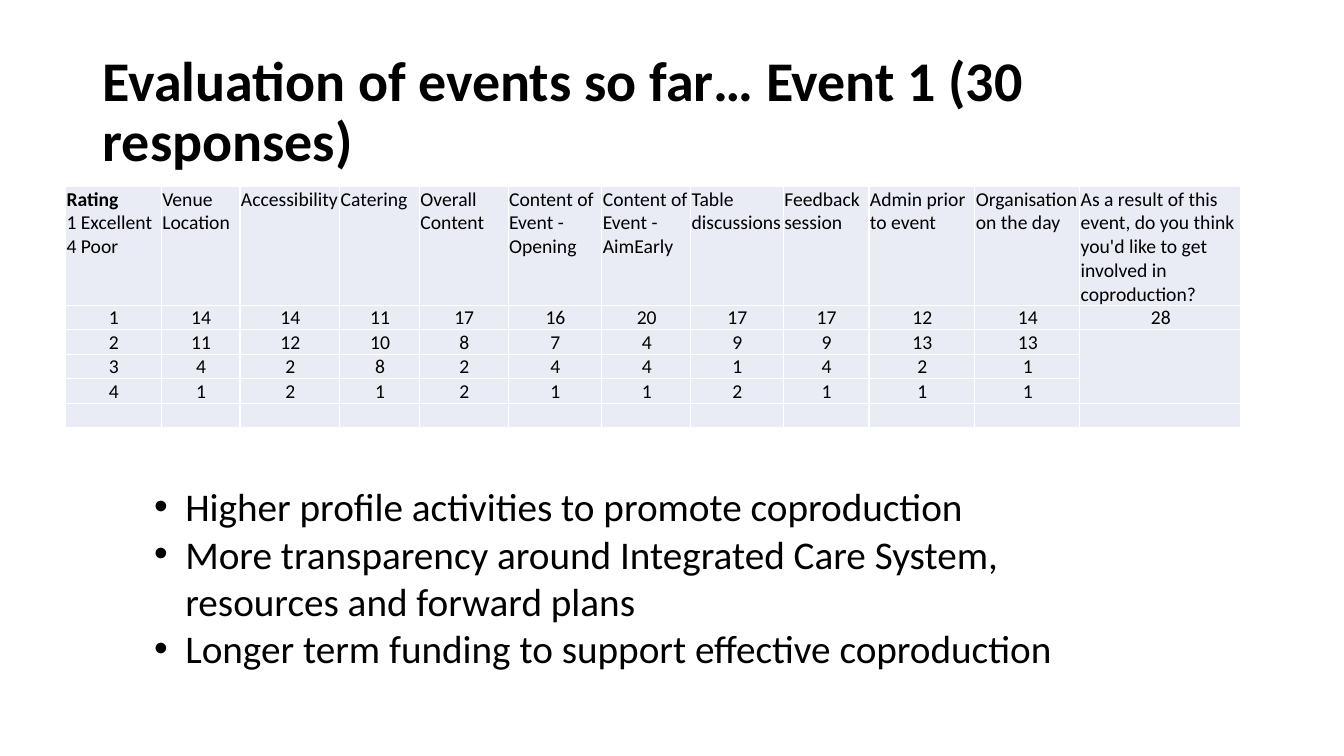
from lxml import etree
from pptx import Presentation
from pptx.dml.color import RGBColor
from pptx.enum.text import MSO_ANCHOR, MSO_AUTO_SIZE, PP_ALIGN
from pptx.oxml.ns import qn
from pptx.util import Inches, Pt

MIDDLE, BOTTOM = MSO_ANCHOR.MIDDLE, MSO_ANCHOR.BOTTOM
CENTER = PP_ALIGN.CENTER
GROW = MSO_AUTO_SIZE.SHAPE_TO_FIT_TEXT
BLACK = RGBColor(0x00, 0x00, 0x00)
PALE = RGBColor(0xE9, 0xEB, 0xF5)
FONT = "Calibri"


def style(para, size, bold=False):
    for run in para.runs:
        run.font.name = FONT
        run.font.size = Pt(size)
        run.font.bold = bold
        run.font.color.rgb = BLACK


def add_box(left, top, width, height, text):
    box = slide.shapes.add_textbox(Inches(left), Inches(top), Inches(width), Inches(height))
    frame = box.text_frame
    frame.word_wrap = True
    frame.text = text
    return frame


deck = Presentation()
deck.slide_width, deck.slide_height = Inches(13.33), Inches(7.5)
slide = deck.slides.add_slide(deck.slide_layouts[6])

title = add_box(0.92, 0.4, 11.5, 1.45, "Evaluation of events so far… Event 1 (30 responses)")
title.vertical_anchor = MIDDLE
title.paragraphs[0].line_spacing = 0.9
style(title.paragraphs[0], 40, True)

rows = [
    ["Rating\n1 Excellent\n4 Poor", "Venue Location", "Accessibility", "Catering",
     "Overall Content", "Content of Event - Opening", "Content of Event - AimEarly",
     "Table discussions", "Feedback session", "Admin prior to event",
     "Organisation on the day",
     "As a result of this event, do you think you'd like to get involved in coproduction?"],
    [1, 14, 14, 11, 17, 16, 20, 17, 17, 12, 14, 28],
    [2, 11, 12, 10, 8, 7, 4, 9, 9, 13, 13, ""],
    [3, 4, 2, 8, 2, 4, 4, 1, 4, 2, 1, ""],
    [4, 1, 2, 1, 2, 1, 1, 2, 1, 1, 1, ""],
    [""] * 12,
]
widths = [0.95, 0.78, 0.99, 0.79, 0.88, 0.93, 0.88, 0.92, 0.85, 1.05, 1.04, 1.6]

table = slide.shapes.add_table(
    len(rows), len(widths), Inches(0.65), Inches(1.85), Inches(11.66), Inches(2.38)).table
table.first_row = False
table.horz_banding = False
for col, width in zip(table.columns, widths):
    col.width = Inches(width)
for r, row in enumerate(rows):
    table.rows[r].height = Inches(0.24 if r else 1.17)
    for c, value in enumerate(row):
        cell = table.cell(r, c)
        cell.fill.solid()
        cell.fill.fore_color.rgb = PALE
        cell.margin_left = cell.margin_top = Inches(0.01)
        cell.margin_right = cell.margin_bottom = 0
        cell.text_frame.text = str(value)
        if r:
            cell.vertical_anchor = BOTTOM if c else MIDDLE
        for para in cell.text_frame.paragraphs:
            style(para, 14, para.text == "Rating")
            if r:
                para.alignment = CENTER
            if value == "":
                etree.SubElement(para._p, qn("a:endParaRPr"), sz="1400")
table.cell(2, 11).merge(table.cell(4, 11))

points = add_box(1.43, 4.74, 10.09, 1.99, "\n".join([
    "Higher profile activities to promote coproduction",
    "More transparency around Integrated Care System, resources and forward plans",
    "Longer term funding to support effective coproduction",
]))
points.auto_size = GROW
for para in points.paragraphs:
    style(para, 28)
    props = para._p.get_or_add_pPr()
    props.set("marL", str(Inches(0.31)))
    props.set("indent", str(-Inches(0.31)))
    etree.SubElement(props, qn("a:buFont"), typeface="Arial")
    etree.SubElement(props, qn("a:buChar"), char="•")

deck.save("out.pptx")
